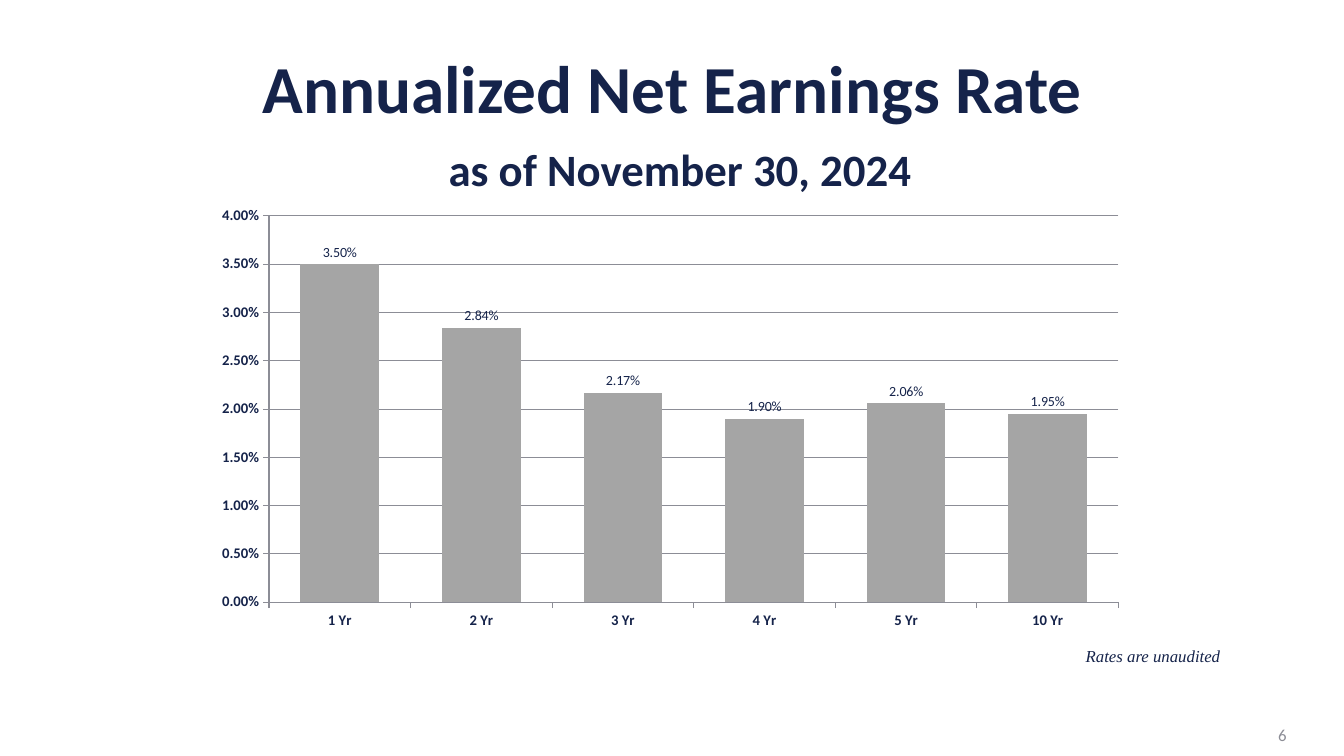
from dataclasses import dataclass
from typing import Any

from lxml import etree
from pptx import Presentation
from pptx import util as u
from pptx.chart import data as cd
from pptx.dml.color import RGBColor
from pptx.enum import chart as ch, text as tx
from pptx.oxml import ns

NAVY = RGBColor(0x15, 0x23, 0x4A)
BAR_GRAY = RGBColor(0xA5, 0xA5, 0xA5)
LINE_GRAY = RGBColor(0x8C, 0x8D, 0x96)
PERCENT = "0.00%"

RATES = {
    "1 Yr": 0.035,
    "2 Yr": 0.0284,
    "3 Yr": 0.0217,
    "4 Yr": 0.019,
    "5 Yr": 0.0206,
    "10 Yr": 0.0195,
}
PLOT_AREA = {
    "layoutTarget": "inner",
    "xMode": "edge",
    "yMode": "edge",
    "x": 0.065,
    "y": 0.031,
    "w": 0.931,
    "h": 0.833,
}


@dataclass(frozen=True)
class Note:
    words: str
    left: float
    top: float
    width: float
    height: float
    align: tx.PP_ALIGN
    anchor: tx.MSO_ANCHOR
    font: str
    color: RGBColor
    italic: bool = False


NOTES = [
    Note("6", 9.86, 7.09, 3, 0.4, tx.PP_ALIGN.RIGHT, tx.MSO_ANCHOR.MIDDLE,
         "Calibri", LINE_GRAY),
    Note("Rates are unaudited", 10.67, 6.36, 2.33, 0.3, tx.PP_ALIGN.LEFT,
         tx.MSO_ANCHOR.TOP, "Times New Roman", NAVY, italic=True),
]


def apply(target: Any, values: dict[str, Any]) -> None:
    for name, value in values.items():
        setattr(target, name, value)


def set_font(font: Any, size: float, color: RGBColor = NAVY,
             name: str = "Calibri", **styles: bool) -> None:
    apply(font, {"size": u.Pt(size), "name": name, **styles})
    font.color.rgb = color


def place(shape: Any, left: float, top: float, width: float, height: float) -> None:
    apply(shape, {
        "left": u.Inches(left),
        "top": u.Inches(top),
        "width": u.Inches(width),
        "height": u.Inches(height),
    })


def add_heading(slide: Any) -> None:
    heading = slide.shapes.title
    place(heading, 0.67, 0.83, 12, 0.89)
    apply(heading.text_frame, {
        "word_wrap": True,
        "auto_size": tx.MSO_AUTO_SIZE.NONE,
        "vertical_anchor": tx.MSO_ANCHOR.MIDDLE,
    })
    line = heading.text_frame.paragraphs[0]
    apply(line, {"alignment": tx.PP_ALIGN.CENTER, "line_spacing": 0.9})
    topic = line.add_run()
    topic.text = "Annualized Net Earnings Rate"
    line.add_line_break()
    indent = line.add_run()
    indent.text = " "
    as_of = line.add_run()
    as_of.text = "as of November 30, 2024"
    for part, size in ((topic, 48), (indent, 48), (as_of, 32)):
        set_font(part.font, size, bold=True)


def style_axis(axis: Any) -> None:
    apply(axis, {
        "major_tick_mark": ch.XL_TICK_MARK.OUTSIDE,
        "minor_tick_mark": ch.XL_TICK_MARK.NONE,
    })
    set_font(axis.tick_labels.font, 10.5, bold=True)
    style_line(axis.format.line)


def style_line(line: Any) -> None:
    line.color.rgb = LINE_GRAY
    line.width = u.Pt(0.75)


def fix_plot_area(chart: Any) -> None:
    plot_area = chart.plots[0]._element.getparent()
    for old in plot_area.findall(ns.qn("c:layout")):
        plot_area.remove(old)
    layout = etree.Element(ns.qn("c:layout"))
    manual = etree.SubElement(layout, ns.qn("c:manualLayout"))
    for tag, value in PLOT_AREA.items():
        etree.SubElement(manual, ns.qn(f"c:{tag}")).set("val", str(value))
    plot_area.insert(0, layout)


def add_rates_chart(slide: Any) -> None:
    rates = cd.CategoryChartData(number_format=PERCENT)
    rates.categories = list(RATES)
    rates.add_series("Series 1", list(RATES.values()))
    chart = slide.shapes.add_chart(
        ch.XL_CHART_TYPE.COLUMN_CLUSTERED, u.Inches(2.08), u.Inches(2),
        u.Inches(9.05), u.Inches(4.6), rates).chart
    apply(chart, {"has_legend": False, "has_title": False})
    set_font(chart.font, 18)
    fix_plot_area(chart)

    columns = chart.plots[0]
    apply(columns, {"gap_width": 80, "vary_by_categories": False,
                    "has_data_labels": True})
    earnings = columns.series[0]
    earnings.format.fill.solid()
    earnings.format.fill.fore_color.rgb = BAR_GRAY
    apply(columns.data_labels, {
        "show_value": True,
        "number_format": PERCENT,
        "number_format_is_linked": False,
        "position": ch.XL_LABEL_POSITION.OUTSIDE_END,
    })
    set_font(columns.data_labels.font, 10)

    style_axis(chart.category_axis)
    scale = chart.value_axis
    style_axis(scale)
    apply(scale, {"minimum_scale": 0, "maximum_scale": 0.04,
                  "major_unit": 0.005, "has_major_gridlines": True})
    apply(scale.tick_labels, {"number_format": PERCENT,
                              "number_format_is_linked": False})
    style_line(scale.major_gridlines.format.line)


def add_note(slide: Any, note: Note) -> None:
    frame = slide.shapes.add_textbox(
        u.Inches(note.left), u.Inches(note.top),
        u.Inches(note.width), u.Inches(note.height)).text_frame
    apply(frame, {"word_wrap": True, "vertical_anchor": note.anchor})
    line = frame.paragraphs[0]
    line.alignment = note.align
    words = line.add_run()
    words.text = note.words
    set_font(words.font, 12, note.color, note.font, italic=note.italic)


def main() -> None:
    deck = Presentation()
    apply(deck, {"slide_width": u.Inches(13.33), "slide_height": u.Inches(7.5)})
    slide = deck.slides.add_slide(deck.slide_layouts.get_by_name("Title Only"))
    add_heading(slide)
    add_rates_chart(slide)
    for note in NOTES:
        add_note(slide, note)
    deck.save("out.pptx")


if __name__ == "__main__":
    main()
